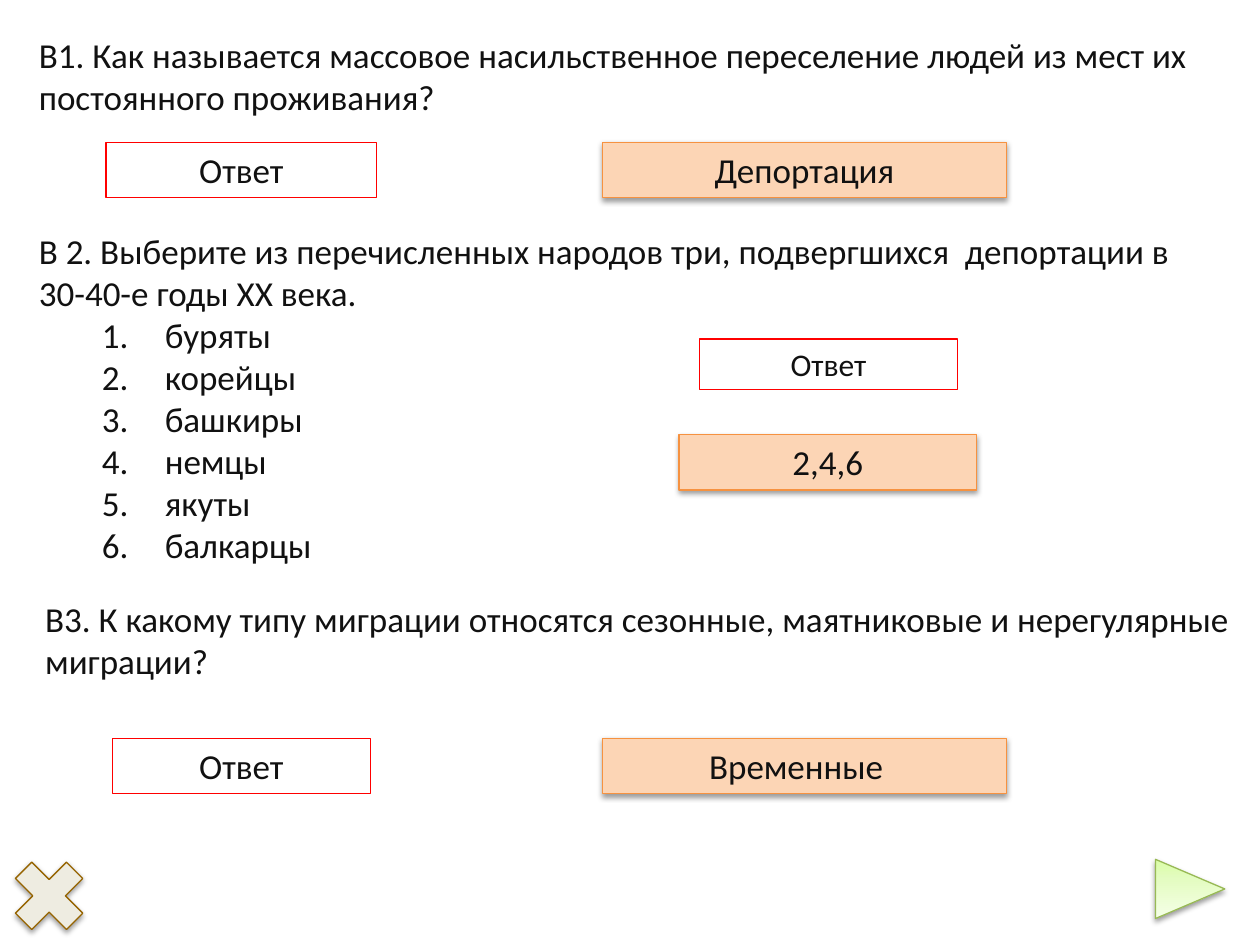
"""Build a quiz slide on deportation and migration."""
from lxml.etree import SubElement
from pptx import Presentation
from pptx.dml.color import RGBColor
from pptx.enum.shapes import MSO_SHAPE
from pptx.enum.text import MSO_ANCHOR, MSO_AUTO_SIZE, PP_ALIGN
from pptx.oxml import parse_xml
from pptx.oxml.ns import nsdecls, qn
from pptx.util import Inches, Pt

INK = RGBColor(0x11, 0x11, 0x11)
RED = RGBColor(0xFF, 0x00, 0x00)
PEACH = RGBColor(0xFC, 0xD5, 0xB5)
ORANGE = RGBColor(0xF6, 0x92, 0x40)
CREAM = RGBColor(0xEE, 0xEC, 0xE1)
BROWN = RGBColor(0x96, 0x64, 0x00)
GREEN = RGBColor(0x98, 0xB9, 0x55)
FADE = [(0, "DAFDA7"), (35, "E4FCC2"), (100, "F5FFE7")]

TASKS = [
    ((0.21, 0.22, 9.67, 0.77),
     "В1. Как называется массовое насильственное переселение людей из мест их постоянного проживания?",
     []),
    ((0.21, 1.77, 9.29, 2.79),
     "В 2. Выберите из перечисленных народов три, подвергшихся  депортации в 30-40-е годы XX века.",
     ["буряты", "корейцы", "башкиры", "немцы", "якуты", "балкарцы"]),
    ((0.26, 4.69, 9.62, 0.77),
     "В3. К какому типу миграции относятся сезонные, маятниковые и нерегулярные миграции?",
     []),
]
ASKS = [
    ((0.84, 1.13, 2.15, 0.44), 20),
    ((5.55, 2.69, 2.05, 0.4), 18),
    ((0.89, 5.86, 2.05, 0.44), 20),
]
KEYS = [
    ((4.78, 1.13, 3.21, 0.44), "Депортация", 0.1),
    ((5.39, 3.45, 2.36, 0.44), "2,4,6", 0.1),
    ((4.78, 5.86, 3.21, 0.44), "Временные", 0.23),
]


def write(frame, lines, size=20, align=PP_ALIGN.LEFT, right=0.1):
    frame.word_wrap = True
    frame.auto_size = MSO_AUTO_SIZE.SHAPE_TO_FIT_TEXT
    frame.margin_right = Inches(right)
    for i, line in enumerate(lines):
        para = frame.add_paragraph() if i else frame.paragraphs[0]
        para.alignment = align
        if i:
            number(para)
        run = para.add_run()
        run.text = line
        run.font.name = "Calibri"
        run.font.size = Pt(size)
        run.font.color.rgb = INK


def number(para):
    para.level = 1
    props = para._p.get_or_add_pPr()
    props.set("marL", str(Inches(1)))
    props.set("indent", str(Inches(-0.5)))
    SubElement(props, qn("a:buFont"), typeface="+mj-lt")
    SubElement(props, qn("a:buAutoNum"), type="arabicPeriod")


def draw(slide, kind, place, line, fill=None, shade=True):
    shape = slide.shapes.add_shape(kind, *map(Inches, place))
    shape.shadow.inherit = False
    shape.line.color.rgb = line
    shape.line.width = Pt(0.75)
    if fill is None:
        shape.fill.background()
    else:
        shape.fill.solid()
        shape.fill.fore_color.rgb = fill
    if shade:
        glow = shape._element.spPr.find(qn("a:effectLst"))
        drop = SubElement(glow, qn("a:outerShdw"), blurRad=str(Pt(3.1)),
                          dist=str(Pt(1.6)), dir="5400000", rotWithShape="0")
        tint = SubElement(drop, qn("a:srgbClr"), val="000000")
        SubElement(tint, qn("a:alpha"), val="38000")
    return shape


def blend(shape):
    stops = "".join(
        f'<a:gs pos="{pos * 1000}"><a:srgbClr val="{tint}"/></a:gs>'
        for pos, tint in FADE)
    fill = parse_xml(
        f'<a:gradFill {nsdecls("a")} rotWithShape="1"><a:gsLst>{stops}</a:gsLst>'
        '<a:lin ang="16200000" scaled="0"/></a:gradFill>')
    props = shape._element.spPr
    props.replace(props.find(qn("a:solidFill")), fill)


def main():
    deck = Presentation()
    deck.slide_width, deck.slide_height = Inches(10), Inches(7.5)
    slide = deck.slides.add_slide(deck.slide_layouts[6])

    draw(slide, MSO_SHAPE.MATH_MULTIPLY, (0, 6.72, 0.78, 0.78), BROWN, CREAM)
    arrow = draw(slide, MSO_SHAPE.PENTAGON, (9.17, 6.82, 0.55, 0.47), GREEN, CREAM)
    arrow.adjustments[0] = 1.17
    arrow.rotation = 180
    arrow._element.spPr.find(qn("a:xfrm")).set("flipH", "1")
    blend(arrow)

    for place, task, items in TASKS:
        box = slide.shapes.add_textbox(*map(Inches, place))
        write(box.text_frame, [task, *items])
    for place, size in ASKS:
        box = draw(slide, MSO_SHAPE.RECTANGLE, place, RED, shade=False)
        box.text_frame.vertical_anchor = MSO_ANCHOR.TOP
        write(box.text_frame, ["Ответ"], size=size, align=PP_ALIGN.CENTER)
    for place, key, right in KEYS:
        box = draw(slide, MSO_SHAPE.RECTANGLE, place, ORANGE, PEACH)
        box.text_frame.vertical_anchor = MSO_ANCHOR.TOP
        write(box.text_frame, [key], align=PP_ALIGN.CENTER, right=right)

    deck.save("out.pptx")


if __name__ == "__main__":
    main()
